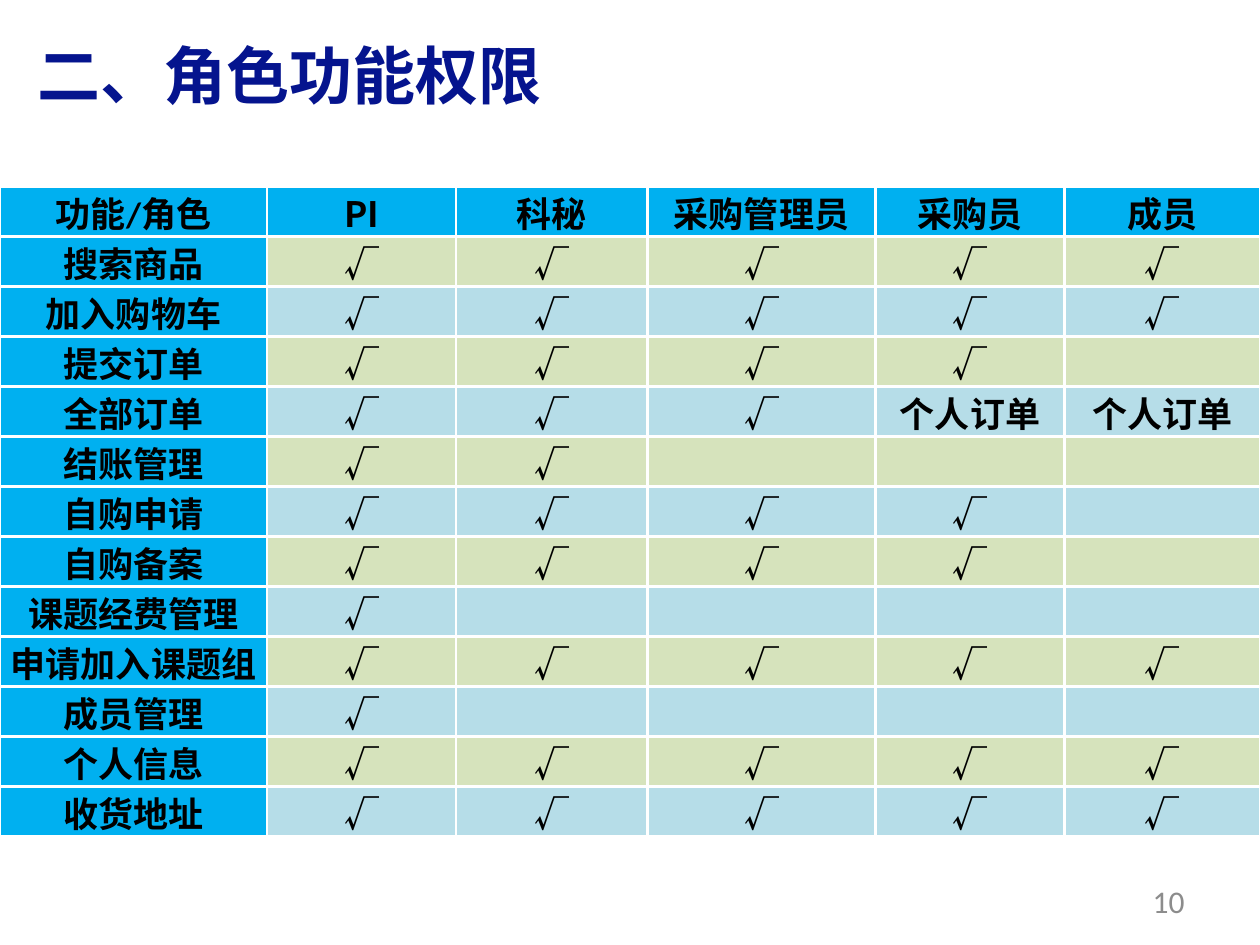
from dataclasses import dataclass

from lxml.etree import SubElement as sub
from pptx import Presentation
from pptx.dml.color import RGBColor as RGB
from pptx.enum.text import MSO_ANCHOR as Anchor, PP_ALIGN as Align
from pptx.oxml.ns import qn
from pptx.util import Inches, Pt


@dataclass(frozen=True)
class Theme:
    """Colours, fonts and type sizes of the slide."""
    title: str = "05148E"
    page: str = "8C8C8C"
    ink: str = "000000"
    line: str = "FFFFFF"
    head: str = "00B0F0"
    bands: tuple = ("D6E3BC", "B6DDE8")
    latin: str = "Calibri"
    han: str = "Noto Sans CJK SC"
    title_size: int = 36
    cell_size: int = 20
    page_size: int = 18
    rule: float = 1.5


THEME = Theme()
TICK = "√"
OWN = "个人订单"
ROLES = ["功能/角色", "PI", "科秘", "采购管理员", "采购员", "成员"]
RIGHTS = [
    ("搜索商品", [TICK] * 5),
    ("加入购物车", [TICK] * 5),
    ("提交订单", [TICK] * 4),
    ("全部订单", [TICK] * 3 + [OWN] * 2),
    ("结账管理", [TICK] * 2),
    ("自购申请", [TICK] * 4),
    ("自购备案", [TICK] * 4),
    ("课题经费管理", [TICK]),
    ("申请加入课题组", [TICK] * 5),
    ("成员管理", [TICK]),
    ("个人信息", [TICK] * 5),
    ("收货地址", [TICK] * 5),
]
WIDTHS = [2.12, 1.5, 1.52, 1.81, 1.5, 1.55]


def style(para, size, color, face, bold=False, align=Align.LEFT):
    """Set the type of a whole paragraph."""
    para.alignment = align
    font = para.font
    font.size, font.bold, font.name = Pt(size), bold, face
    font.color.rgb = RGB.from_string(color)
    sub(para._p.pPr.find(qn("a:defRPr")), qn("a:ea"), typeface=THEME.han)


def add_text(slide, box, text):
    """Add a text box and return its frame."""
    frame = slide.shapes.add_textbox(*map(Inches, box)).text_frame
    frame.word_wrap = True
    frame.text = text
    return frame


def add_title(slide, box, text):
    """Add the slide heading."""
    para = add_text(slide, box, text).paragraphs[0]
    para.line_spacing = 0.9
    style(para, THEME.title_size, THEME.title, THEME.han, True)


def add_page(slide, box, text):
    """Add the page number."""
    frame = add_text(slide, box, text)
    frame.vertical_anchor = Anchor.MIDDLE
    style(frame.paragraphs[0], THEME.page_size, THEME.page, THEME.latin,
          align=Align.RIGHT)


def add_rules(cell):
    """Draw the four borders of a cell."""
    props = cell._tc.get_or_add_tcPr()
    for side in ("lnL", "lnR", "lnT", "lnB"):
        line = sub(props, qn(f"a:{side}"), w=str(Pt(THEME.rule)))
        sub(sub(line, qn("a:solidFill")), qn("a:srgbClr"), val=THEME.line)


def fill_cell(cell, text, fill):
    """Write one cell with its borders and fill."""
    cell.margin_left = cell.margin_right = Inches(0.07)
    cell.margin_top = cell.margin_bottom = 0
    add_rules(cell)
    cell.fill.solid()
    cell.fill.fore_color.rgb = RGB.from_string(fill)
    if text:
        cell.text = text
    face = THEME.han if text in (TICK, "PI") else THEME.latin
    style(cell.text_frame.paragraphs[0], THEME.cell_size, THEME.ink, face,
          True, Align.CENTER)


def add_grid(slide, box):
    """Add the table of rights by role."""
    rows = [ROLES] + [[name] + marks for name, marks in RIGHTS]
    table = slide.shapes.add_table(len(rows), len(ROLES),
                                   *map(Inches, box)).table
    table.first_row = table.horz_banding = False
    for col, width in zip(table.columns, WIDTHS):
        col.width = Inches(width)
    for r, row in enumerate(rows):
        band = THEME.bands[(r - 1) % 2]
        for c in range(len(ROLES)):
            text = row[c] if c < len(row) else ""
            fill = THEME.head if r == 0 or c == 0 else band
            fill_cell(table.cell(r, c), text, fill)


def main():
    """Build and save the slide."""
    deck = Presentation()
    deck.slide_width, deck.slide_height = Inches(10), Inches(7.5)
    slide = deck.slides.add_slide(deck.slide_layouts[6])
    add_title(slide, (0.2, 0.31, 5.58, 0.55), "二、角色功能权限")
    add_page(slide, (7.17, 6.95, 2.33, 0.4), "10")
    add_grid(slide, (0, 1.48, 10, 5.16))
    deck.save("out.pptx")


if __name__ == "__main__":
    main()
